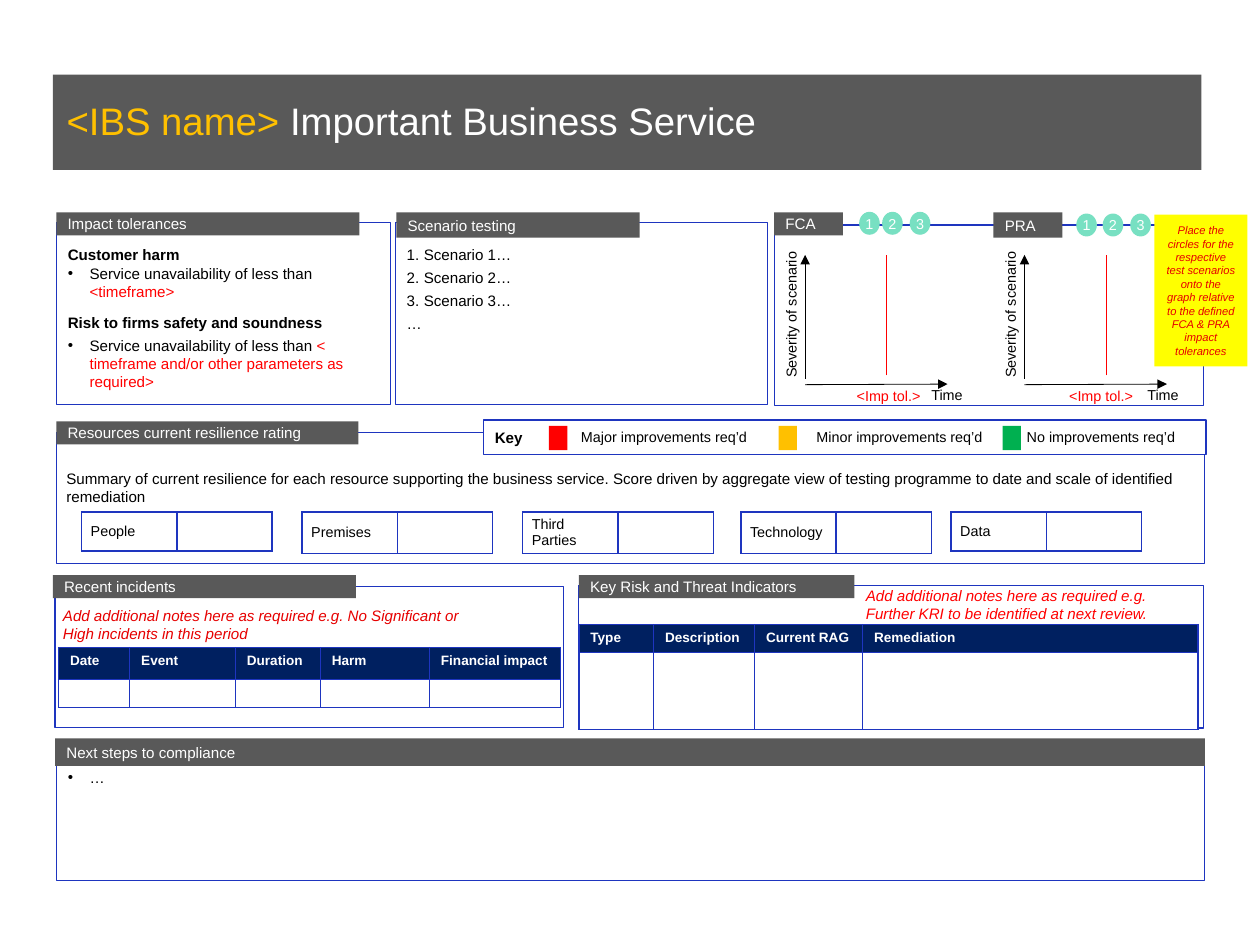
from dataclasses import dataclass
from typing import NamedTuple, Optional

from lxml.etree import SubElement
from pptx import Presentation
from pptx.dml.color import RGBColor
from pptx.enum.shapes import MSO_CONNECTOR, MSO_SHAPE
from pptx.enum.text import MSO_ANCHOR, MSO_AUTO_SIZE, PP_ALIGN
from pptx.oxml.ns import qn
from pptx.shapes.autoshape import Shape
from pptx.slide import Slide
from pptx.text.text import TextFrame
from pptx.util import Emu, Inches, Pt

STEP = Inches(0.1)
COLS, ROWS = 109.7, 82.3
FONT = "Arial"
BLACK = RGBColor(0x00, 0x00, 0x00)
WHITE = RGBColor(0xFF, 0xFF, 0xFF)
GREY = RGBColor(0x59, 0x59, 0x59)
BLUE = RGBColor(0x1E, 0x35, 0xBF)
NAVY = RGBColor(0x00, 0x20, 0x60)
RED = RGBColor(0xFF, 0x00, 0x00)
ROSE = RGBColor(0xE6, 0x00, 0x00)
AMBER = RGBColor(0xFF, 0xC0, 0x00)
GREEN = RGBColor(0x00, 0xB0, 0x50)
MINT = RGBColor(0x78, 0xE0, 0xC2)
YELLOW = RGBColor(0xFF, 0xFF, 0x00)

INSET = (1, 0.5, 1, 0.5)
LIST = (1, 2, 1, 0.5)
SLIM = (1, 0.4, 1, 0.4)


class Box(NamedTuple):
    x: float
    y: float
    w: float
    h: float


class Tag(NamedTuple):
    text: str
    box: Box


class Rate(NamedTuple):
    text: str
    color: RGBColor
    x: float
    left: float


class Part(NamedTuple):
    text: str
    x: float
    h: float


@dataclass
class Graph:
    name: str
    x: float
    tall: float
    time: float
    tol: float
    dots: tuple[float, ...]
    top: float


@dataclass
class Sheet:
    box: Box
    cols: tuple[float, ...]
    rows: tuple[float, ...]
    heads: tuple[str, ...]


PANELS = (Box(67.4, 19.6, 37.4, 15.7), Box(4.9, 37.7, 100, 11.4),
          Box(50.4, 51, 54.4, 12.4), Box(4.8, 51.1, 44.3, 12.3))
TAGS = (
    Tag("Impact tolerances", Box(4.9, 18.5, 26.4, 2)),
    Tag("Scenario testing", Box(34.5, 18.5, 21.2, 2.2)),
    Tag("Resources current resilience rating", Box(4.9, 36.7, 26.3, 2)),
    Tag("Key Risk and Threat Indicators", Box(50.4, 50.1, 24, 2)),
    Tag("Recent incidents", Box(4.6, 50.1, 26.4, 2)),
    Tag("Next steps to compliance", Box(4.8, 64.3, 100.1, 2.4)),
)
GRAPHS = (
    Graph("FCA", 67.4, 2, 80.1, 73.6, (74.8, 76.8, 79.2), 18.45),
    Graph("PRA", 86.5, 2.2, 98.9, 92.1, (93.7, 96, 98.4), 18.6),
)
RATES = (
    Rate("Major improvements req’d", RED, 47.8, 49.6),
    Rate("Minor improvements req’d", AMBER, 67.8, 70.1),
    Rate("No improvements req’d", GREEN, 87.3, 88.4),
)
PARTS = (Part("People", 7.1, 3.4), Part("Premises", 26.3, 3.6),
         Part("Third\nParties", 45.5, 3.6), Part("Technology", 64.5, 3.6),
         Part("Data", 82.8, 3.4))
SHEETS = (
    Sheet(Box(5.1, 56.4, 43.7, 5), (6.2, 9.2, 7.4, 9.5, 11.4), (2.8, 2.2),
          ("Date", "Event", "Duration", "Harm", "Financial impact")),
    Sheet(Box(50.4, 54.4, 53.9, 9.1), (6.5, 8.8, 9.4, 29.2), (2.4, 6.7),
          ("Type", "Description", "Current RAG", "Remediation")),
)


def span(n: float) -> Emu:
    return Emu(round(n * STEP))


def put(frame: TextFrame, text: str, *, size: float = 9.5, color: RGBColor = BLACK,
        hot: RGBColor = RED, bold: bool = False, ital: bool = False,
        align: PP_ALIGN = PP_ALIGN.LEFT, mark: str = "", dent: float = 0,
        before: float = 0, after: float = 0, lead: float = 1) -> None:
    para = frame.paragraphs[0]
    if para.runs:
        para = frame.add_paragraph()
    para.alignment, para.line_spacing = align, lead
    para.space_before, para.space_after = Pt(before), Pt(after)
    props = para._p.get_or_add_pPr()
    props.set("marL", str(span(dent)))
    props.set("indent", str(-span(dent)))
    if mark == "1.":
        SubElement(props, qn("a:buAutoNum"), type="arabicPeriod")
    elif mark:
        SubElement(props, qn("a:buChar"), char=mark)
    else:
        SubElement(props, qn("a:buNone"))
    head, left, rest = text.partition("<")
    mid, right, tail = rest.partition(">")
    for bit, tone in ((head, color), (left + mid + right, hot), (tail, color)):
        if bit:
            run = para.add_run()
            run.text = bit
            font = run.font
            font.name, font.size, font.bold, font.italic = FONT, Pt(size), bold, ital
            font.color.rgb = tone


def fit(frame: TextFrame, ins: tuple[float, ...] = INSET,
        anchor: MSO_ANCHOR = MSO_ANCHOR.TOP,
        auto: MSO_AUTO_SIZE = MSO_AUTO_SIZE.NONE) -> TextFrame:
    frame.word_wrap, frame.auto_size, frame.vertical_anchor = True, auto, anchor
    frame.margin_left, frame.margin_top, frame.margin_right, frame.margin_bottom = map(span, ins)
    return frame


def skin(shape: Shape, fill: Optional[RGBColor], line: Optional[RGBColor], wide: float) -> None:
    shape.shadow.inherit = False
    if fill is None:
        shape.fill.background()
    else:
        shape.fill.solid()
        shape.fill.fore_color.rgb = fill
    if line is None:
        shape.line.fill.background()
    else:
        shape.line.color.rgb = line
        shape.line.width = Pt(wide)


def draw(slide: Slide, box: Box, fill: Optional[RGBColor] = None,
         line: Optional[RGBColor] = None, wide: float = 0.75,
         kind: MSO_SHAPE = MSO_SHAPE.RECTANGLE, ins: tuple[float, ...] = INSET) -> TextFrame:
    shape = slide.shapes.add_shape(kind, *map(span, box))
    skin(shape, fill, line, wide)
    return fit(shape.text_frame, ins, MSO_ANCHOR.MIDDLE)


def hold(slide: Slide, idx: int, box: Box, fill: Optional[RGBColor] = None,
         line: Optional[RGBColor] = BLUE, ins: tuple[float, ...] = LIST) -> TextFrame:
    shape = slide.placeholders[idx]
    shape.left, shape.top, shape.width, shape.height = map(span, box)
    skin(shape, fill, line, 0.75)
    return fit(shape.text_frame, ins)


def note(slide: Slide, box: Box, ins: tuple[float, ...] = INSET) -> TextFrame:
    area = slide.shapes.add_textbox(*map(span, box))
    return fit(area.text_frame, ins, auto=MSO_AUTO_SIZE.SHAPE_TO_FIT_TEXT)


def wire(slide: Slide, ends: tuple[float, ...], color: RGBColor = BLACK, tip: bool = True) -> None:
    line = slide.shapes.add_connector(MSO_CONNECTOR.STRAIGHT, *map(span, ends))
    line.line.color.rgb = color
    line.line.width = Pt(0.5)
    props = line._element.spPr
    if tip:
        SubElement(props.find(qn("a:ln")), qn("a:tailEnd"), type="triangle")
    SubElement(props, qn("a:effectLst"))


def table(slide: Slide, sheet: Sheet, *, fill: RGBColor, size: float, color: RGBColor,
          bold: bool, ins: tuple[float, ...], anchor: MSO_ANCHOR) -> None:
    grid = slide.shapes.add_table(len(sheet.rows), len(sheet.cols), *map(span, sheet.box)).table
    for col, wide in zip(grid.columns, sheet.cols):
        col.width = span(wide)
    for row, tall in zip(grid.rows, sheet.rows):
        row.height = span(tall)
    for n, cell in enumerate(grid.iter_cells()):
        cell.margin_left, cell.margin_top, cell.margin_right, cell.margin_bottom = map(span, ins)
        cell.vertical_anchor = anchor
        for side in ("L", "R", "T", "B"):
            edge = SubElement(cell._tc.get_or_add_tcPr(), qn(f"a:ln{side}"), w=str(Pt(1)))
            SubElement(SubElement(edge, qn("a:solidFill")), qn("a:srgbClr"), val=str(BLUE))
        cell.fill.solid()
        cell.fill.fore_color.rgb = fill if n < len(sheet.cols) else WHITE
        text = sheet.heads[n] if n < len(sheet.heads) else ""
        if text:
            for row in text.split("\n"):
                put(cell.text_frame, row, size=size, color=color, bold=bold)
        else:
            end = cell.text_frame.paragraphs[0]._p.get_or_add_endParaRPr()
            end.set("sz", str(int(size * 100)))


def plot(slide: Slide, graph: Graph) -> None:
    x = graph.x
    wire(slide, (x + 2.7, 33, x + 2.7, 22.2))
    wire(slide, (x + 2.7, 33.5, x + 15.1, 33.45))
    wire(slide, (x + 9.8, 32.7, x + 9.8, 22.2), RED, False)
    side = note(slide, Box(x + 0.7, 18.6, 1.5, 15.3), (0, 0.5, 0, 0.5))
    side._txBody.bodyPr.set("vert", "vert270")
    put(side, "Severity of scenario", size=9)
    put(note(slide, Box(graph.time, 33.1, 6.9, 2.5)), "Time", size=9)
    put(note(slide, Box(graph.tol, 33.25, 8.2, 2.5)), "<Imp tol.>", size=9)
    for n, left in enumerate(graph.dots, 1):
        dot = draw(slide, Box(left, graph.top, 1.8, 2), MINT, kind=MSO_SHAPE.OVAL, ins=(0, 0, 0, 0))
        put(dot, str(n), size=9, color=WHITE, align=PP_ALIGN.CENTER)
    put(draw(slide, Box(x, 18.5, 6, graph.tall), GREY, ins=SLIM), graph.name, color=WHITE)


def main() -> None:
    deck = Presentation()
    deck.slide_width, deck.slide_height = span(COLS), span(ROWS)
    slide = deck.slides.add_slide(deck.slide_layouts[4])
    spare = slide.placeholders[3]._element
    spare.getparent().remove(spare)

    title = hold(slide, 0, Box(4.6, 6.5, 100, 8.3), GREY, None, (1.2, 2.4, 0, 0.8))
    put(title, "<IBS name> Important Business Service", size=24, color=WHITE, hot=AMBER, lead=0.9)
    harm = hold(slide, 1, Box(4.9, 19.4, 29.1, 15.8))
    put(harm, "Customer harm", bold=True)
    put(harm, "Service unavailability of less than <timeframe>", mark="•", dent=1.9, after=3)
    put(harm, "Risk to firms safety and soundness", bold=True, before=5.3, after=3)
    put(harm, "Service unavailability of less than < timeframe and/or other parameters as required>",
        mark="•", dent=1.9)
    tests = hold(slide, 2, Box(34.4, 19.4, 32.4, 15.8))
    for n in range(1, 4):
        put(tests, f"Scenario {n}…", mark="1.", dent=1.5, after=3)
    put(tests, "…", after=3)
    steps = hold(slide, 4, Box(4.9, 65.3, 100, 11.4), WHITE, ins=(1, 1.6, 1, 0.5))
    put(steps, "…", mark="•", dent=1.9)

    for box in PANELS:
        draw(slide, box, line=BLUE)
    for tag in TAGS:
        put(draw(slide, tag.box, GREY, ins=SLIM), tag.text, color=WHITE)
    for graph in GRAPHS:
        plot(slide, graph)

    put(draw(slide, Box(42.1, 36.6, 62.9, 3), WHITE, BLUE, 1), "Key", bold=True)
    for rate in RATES:
        draw(slide, Box(rate.x, 37.1, 1.6, 2.1), rate.color)
        put(note(slide, Box(rate.left, 36.8, 16.5, 2.5)), rate.text, size=9)
    put(note(slide, Box(4.8, 40.4, 100, 4.2)),
        "Summary of current resilience for each resource supporting the business service. "
        "Score driven by aggregate view of testing programme to date and scale of identified remediation")
    for part in PARTS:
        sheet = Sheet(Box(part.x, 44.6, 16.6, part.h), (8.3, 8.3), (part.h,), (part.text,))
        table(slide, sheet, fill=WHITE, size=9, color=BLACK, bold=False,
              ins=(0.8, 0, 0.8, 0), anchor=MSO_ANCHOR.MIDDLE)
    for sheet in SHEETS:
        table(slide, sheet, fill=NAVY, size=8.5, color=WHITE, bold=True,
              ins=INSET, anchor=MSO_ANCHOR.TOP)
    put(note(slide, Box(4.5, 52.3, 37, 4.2)),
        "Add additional notes here as required e.g. No Significant or High incidents in this period",
        color=ROSE, ital=True)
    put(note(slide, Box(74.4, 50.6, 30.2, 4.2)),
        "Add additional notes here as required e.g. Further KRI to be identified at next review.",
        color=RED, ital=True)
    put(draw(slide, Box(100.5, 18.7, 8.1, 13.2), YELLOW),
        "Place the circles for the respective test scenarios onto the graph relative to the "
        "defined FCA & PRA impact tolerances", size=7, color=ROSE, ital=True, align=PP_ALIGN.CENTER)
    deck.save("out.pptx")


if __name__ == "__main__":
    main()
